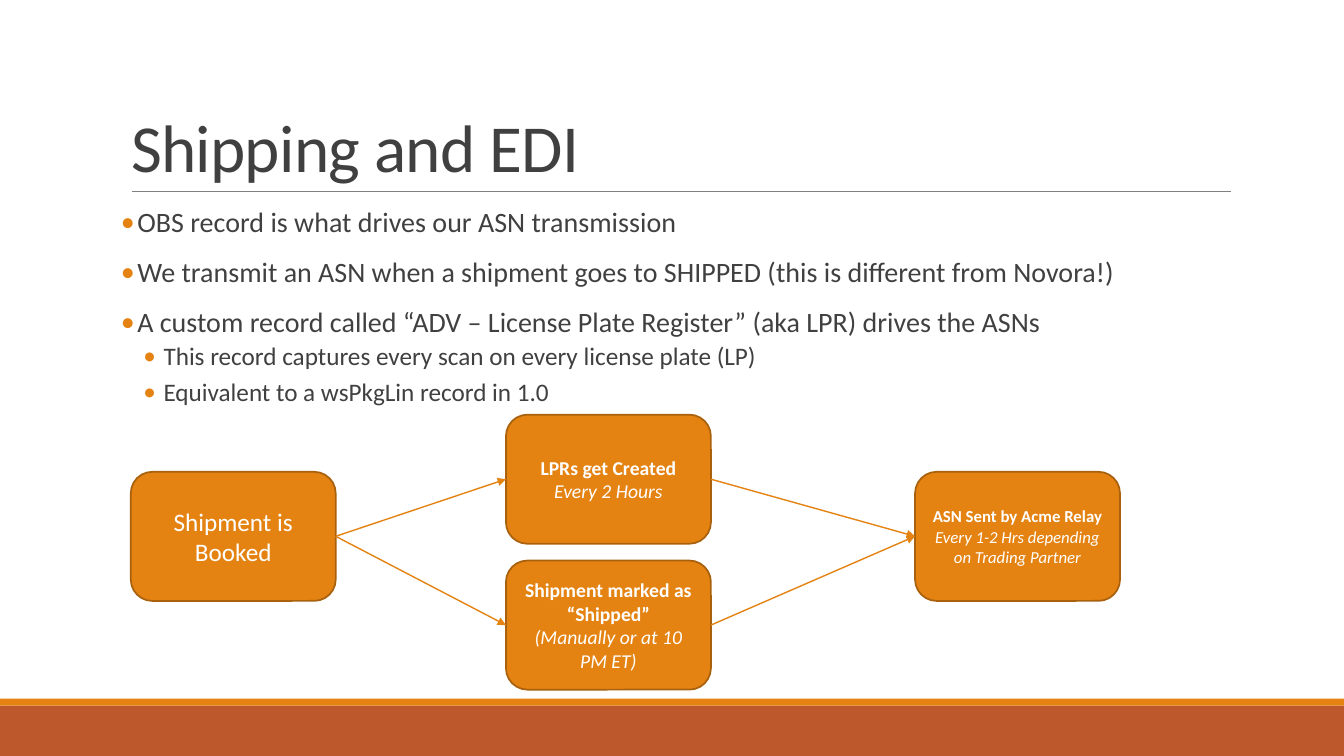
from lxml import etree
from pptx import Presentation
from pptx.dml.color import RGBColor
from pptx.enum import shapes, text
from pptx.oxml import ns
from pptx.util import Pt

COLORS = {
    "orange": "E48312",
    "rust": "BD582C",
    "outline": "A9610D",
    "rule": "808080",
    "ink": "404040",
    "white": "FFFFFF",
}
FONT = "Calibri"


def style_runs(paragraph, size, color, bold=False, italic=False):
    for run in paragraph.runs:
        run.font.name = FONT
        run.font.size = Pt(size)
        run.font.bold = bold
        run.font.italic = italic
        run.font.color.rgb = RGBColor.from_string(COLORS[color])


def add_line(start, end, color, width):
    line = slide.shapes.add_connector(
        shapes.MSO_CONNECTOR.STRAIGHT, *[Pt(value) for value in (*start, *end)])
    line.line.color.rgb = RGBColor.from_string(COLORS[color])
    line.line.width = Pt(width)
    etree.SubElement(line._element.spPr, ns.qn("a:effectLst"))
    return line


prs = Presentation()
prs.slide_width, prs.slide_height = Pt(960), Pt(540)
slide = prs.slides.add_slide(prs.slide_layouts[1])

for top, height, color in [(504, 36, "rust"), (499, 5, "orange")]:
    band = slide.shapes.add_shape(
        shapes.MSO_SHAPE.RECTANGLE, 0, Pt(top), Pt(960), Pt(height))
    band.shadow.inherit = False
    band.fill.solid()
    band.fill.fore_color.rgb = RGBColor.from_string(COLORS[color])
    band.line.fill.background()

add_line((94.3, 136.8), (879, 136.8), "rule", 0.5)

heading = slide.shapes.title
heading.left, heading.top, heading.width, heading.height = Pt(86.4), Pt(22.6), Pt(792), Pt(114.2)
heading.text_frame.text = "Shipping and EDI"
heading.text_frame.auto_size = text.MSO_AUTO_SIZE.NONE
heading.text_frame.vertical_anchor = text.MSO_ANCHOR.BOTTOM
heading_line = heading.text_frame.paragraphs[0]
heading_line.alignment = text.PP_ALIGN.LEFT
heading_line.line_spacing = 0.85
style_runs(heading_line, 48, "ink")
heading_line.runs[0].font._element.set("spc", "-50")

points = [
    (0, "OBS record is what drives our ASN transmission"),
    (0, "We transmit an ASN when a shipment goes to SHIPPED (this is different from Novora!)"),
    (0, "A custom record called “ADV – License Plate Register” (aka LPR) drives the ASNs"),
    (1, "This record captures every scan on every license plate (LP)"),
    (1, "Equivalent to a wsPkgLin record in 1.0"),
]
level_formats = [(20, 11.7, 11.7, 12, 2), (18, 30.4, 14.4, 2, 4)]

body = slide.placeholders[1]
body.left, body.top, body.width, body.height = Pt(86.4), Pt(145.4), Pt(792), Pt(316.8)
body_frame = body.text_frame
body_frame.text = "\n".join(wording for _, wording in points)
body_frame.auto_size = text.MSO_AUTO_SIZE.NONE
body_frame.vertical_anchor = text.MSO_ANCHOR.TOP
body_frame.margin_left = body_frame.margin_right = 0
for paragraph, (level, _) in zip(body_frame.paragraphs, points):
    size, indent, hanging, before, after = level_formats[level]
    paragraph.level = level
    paragraph.line_spacing = 0.9
    paragraph.space_before, paragraph.space_after = Pt(before), Pt(after)
    style_runs(paragraph, size, "ink")
    properties = paragraph._p.get_or_add_pPr()
    properties.set("marL", str(Pt(indent)))
    properties.set("indent", str(-Pt(hanging)))
    bullet_color = etree.SubElement(properties, ns.qn("a:buClr"))
    etree.SubElement(bullet_color, ns.qn("a:srgbClr"), val=COLORS["orange"])
    etree.SubElement(properties, ns.qn("a:buFont"), typeface=FONT)
    etree.SubElement(properties, ns.qn("a:buChar"), char="•")

steps = [
    ("booked", 93.4, 337, 18, ["Shipment is Booked"]),
    ("shipped", 361.4, 400.4, 14, ["Shipment marked as “Shipped”", "(Manually or at 10 PM ET)"]),
    ("created", 361.4, 296.2, 14, ["LPRs get Created", "Every 2 Hours"]),
    ("sent", 653.6, 337, 12,
     ["ASN Sent by Acme Relay", "Every 1-2 Hrs depending on Trading Partner"]),
]
flow = {}
for key, left, top, size, wording in steps:
    step = slide.shapes.add_shape(
        shapes.MSO_SHAPE.ROUNDED_RECTANGLE, Pt(left), Pt(top), Pt(146.4), Pt(92.2))
    step.shadow.inherit = False
    step.fill.solid()
    step.fill.fore_color.rgb = RGBColor.from_string(COLORS["orange"])
    step.line.color.rgb = RGBColor.from_string(COLORS["outline"])
    step.line.width = Pt(1.25)
    step.text_frame.text = "\n".join(wording)
    step.text_frame.word_wrap = True
    step.text_frame.vertical_anchor = text.MSO_ANCHOR.MIDDLE
    for row, paragraph in enumerate(step.text_frame.paragraphs):
        paragraph.alignment = text.PP_ALIGN.CENTER
        style_runs(paragraph, size, "white", bold=len(wording) > 1 and row == 0, italic=row == 1)
    flow[key] = step

RIGHT_SITE, LEFT_SITE = 3, 1
for source, target in [("booked", "shipped"), ("created", "sent"),
                       ("booked", "created"), ("shipped", "sent")]:
    arrow = add_line((0, 0), (0, 0), "orange", 1)
    arrow.begin_connect(flow[source], RIGHT_SITE)
    arrow.end_connect(flow[target], LEFT_SITE)
    etree.SubElement(arrow.line._get_or_add_ln(), ns.qn("a:tailEnd"), type="triangle")

prs.save("out.pptx")
